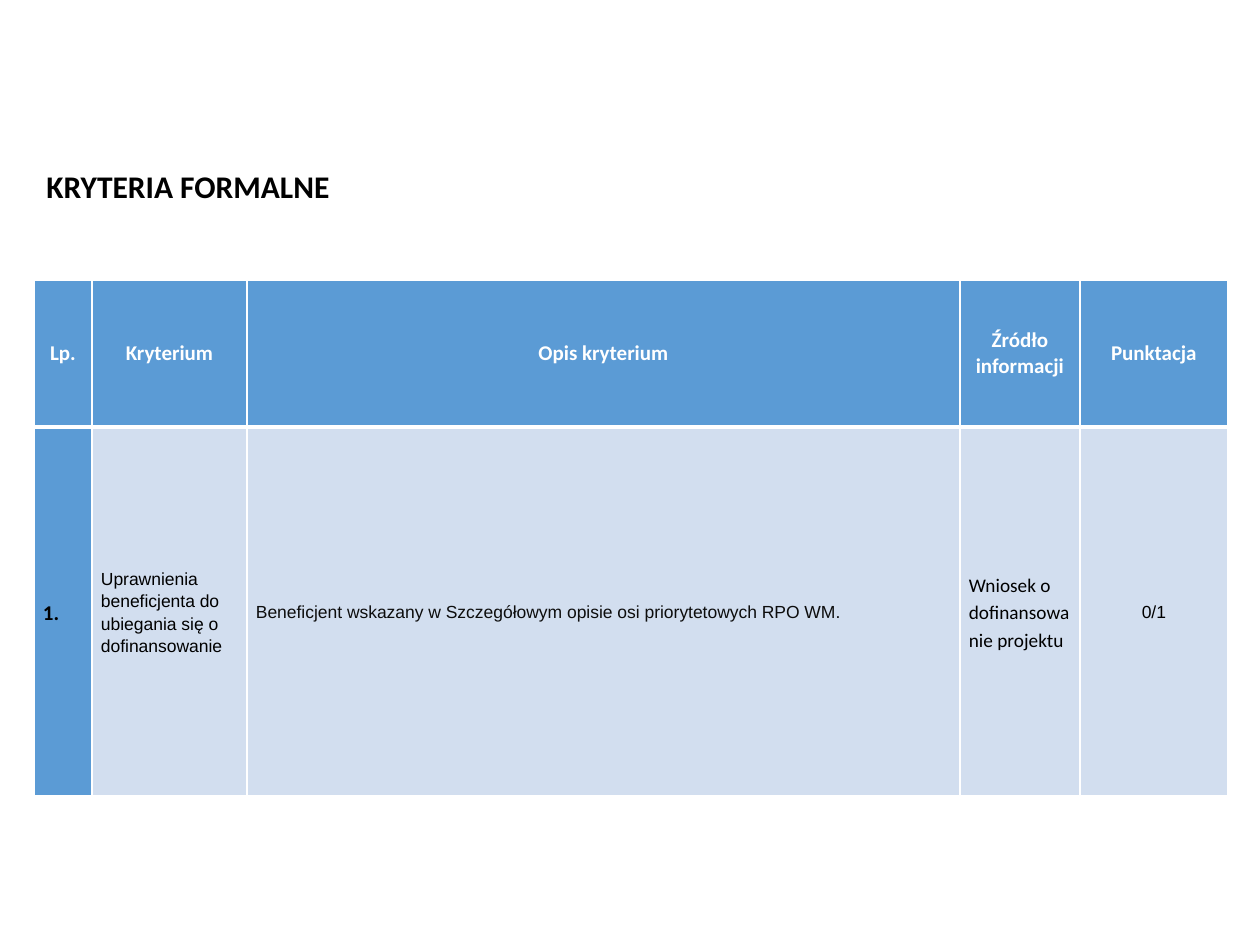
import pptx
import pptx.dml.color
import pptx.enum.text
import pptx.oxml.ns
import pptx.util
from lxml import etree

PX = 914400 // 126
LEFT = pptx.enum.text.PP_ALIGN.LEFT
CENTER = pptx.enum.text.PP_ALIGN.CENTER
MIDDLE = pptx.enum.text.MSO_ANCHOR.MIDDLE

BLUE, PALE, WHITE, BLACK = "5B9BD5", "D2DEEF", "FFFFFF", "000000"

COLS = [58, 155, 713, 120, 148]
ROWS = [147, 369]
HEADERS = ["Lp.", "Kryterium", "Opis kryterium", "Źródło informacji", "Punktacja"]
# text, fill, font, size, colour, bold, alignment
CRITERION = [
    ("1.", BLUE, "Calibri", 12, BLACK, True, LEFT),
    ("Uprawnienia beneficjenta do ubiegania się o dofinansowanie",
     PALE, "Arial", 10, BLACK, False, LEFT),
    ("Beneficjent wskazany w Szczegółowym opisie osi priorytetowych RPO WM.",
     PALE, "Arial", 10, "0D0D0D", False, LEFT),
    ("Wniosek o dofinansowanie projektu", PALE, "Calibri", 11, BLACK, False, LEFT),
    ("0/1", PALE, "Arial", 10, BLACK, False, CENTER),
]


def px(n):
    return pptx.util.Emu(n * PX)


def rgb(value):
    return pptx.dml.color.RGBColor.from_string(value)


def write(tf, text, font, size, color, bold, align):
    tf.text = text
    p = tf.paragraphs[0]
    p.alignment = align
    f = p.runs[0].font
    f.name, f.size, f.bold = font, pptx.util.Pt(size), bold
    f.color.rgb = rgb(color)
    return p


def set_borders(cell, **widths):
    """Draw white cell borders, widths in points by side: L, R, T, B."""
    tc_pr = cell._tc.get_or_add_tcPr()
    qn = pptx.oxml.ns.qn
    for side, width in widths.items():
        ln = etree.SubElement(tc_pr, qn(f"a:ln{side}"), w=str(pptx.util.Pt(width)))
        fill = etree.SubElement(ln, qn("a:solidFill"))
        etree.SubElement(fill, qn("a:srgbClr"), val=WHITE)


def fill_cell(cell, fill):
    cell.vertical_anchor = MIDDLE
    cell.fill.solid()
    cell.fill.fore_color.rgb = rgb(fill)


def add_title(s, x, y, w, h):
    tf = s.shapes.add_textbox(px(x), px(y), px(w), px(h)).text_frame
    tf.word_wrap = False
    tf.auto_size = pptx.enum.text.MSO_AUTO_SIZE.SHAPE_TO_FIT_TEXT
    tf.vertical_anchor = MIDDLE
    write(tf, "KRYTERIA FORMALNE", "Calibri", 18, BLACK, True, LEFT)


def add_criteria_table(s, x, y):
    table = s.shapes.add_table(len(ROWS), len(COLS), px(x), px(y),
                               px(sum(COLS)), px(sum(ROWS))).table
    for col, w in zip(table.columns, COLS):
        col.width = px(w)
    for row, h in zip(table.rows, ROWS):
        row.height = px(h)

    # Header row
    for i, text in enumerate(HEADERS):
        cell = table.cell(0, i)
        set_borders(cell, L=1, R=1, T=1, B=3)
        fill_cell(cell, BLUE)
        write(cell.text_frame, text, "Calibri", 12, WHITE, True, CENTER)

    # Criterion row
    for i, (text, fill, *style) in enumerate(CRITERION):
        cell = table.cell(1, i)
        set_borders(cell, L=1, R=1, T=3, B=1)
        fill_cell(cell, fill)
        cell.margin_left = cell.margin_right = px(9)
        cell.margin_top = cell.margin_bottom = 0
        write(cell.text_frame, text, *style).line_spacing = 1.15


def main():
    prs = pptx.Presentation()
    prs.slide_width, prs.slide_height = px(1260), px(945)
    s = prs.slides.add_slide(prs.slide_layouts[6])
    add_title(s, 34, 161, 311, 50)
    add_criteria_table(s, 34, 280)
    prs.save("out.pptx")


if __name__ == "__main__":
    main()
